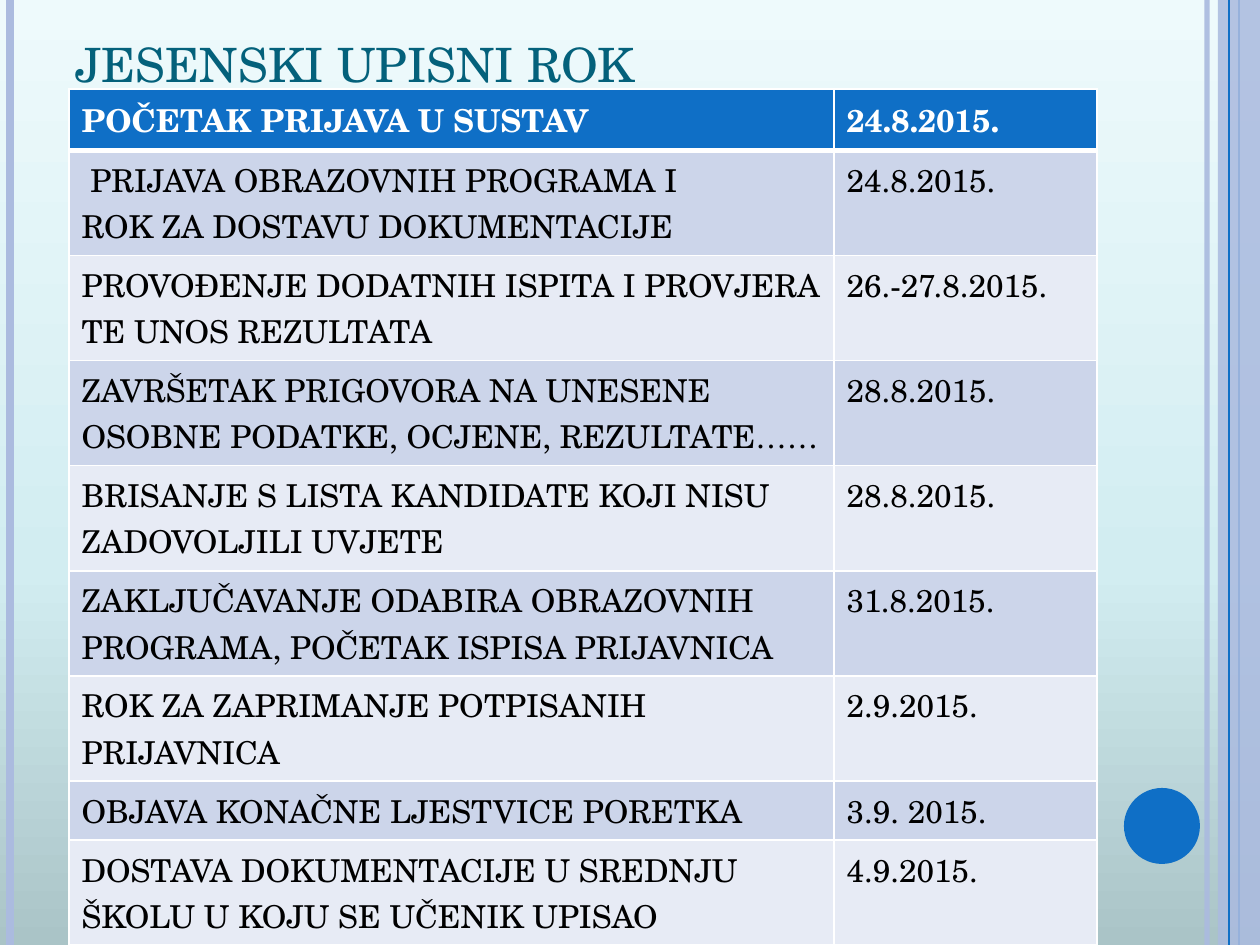
from copy import deepcopy
from typing import NamedTuple

from lxml.etree import SubElement as Sub
from pptx import Presentation
from pptx.dml.color import RGBColor as Rgb
from pptx.enum.shapes import MSO_CONNECTOR as Link, MSO_SHAPE as Kind
from pptx.enum.text import MSO_ANCHOR as Anchor, MSO_AUTO_SIZE as Fit, PP_ALIGN as Align
from pptx.oxml.ns import qn
from pptx.util import Emu, Pt

WIDE, HIGH = 1260, 945
FONT = "TeX Gyre Schola"
HUES = {
    "blue": "0F6FC6", "pale": "ABBBDF", "teal": "04617B",
    "odd": "CCD5EA", "even": "E7EBF5", "white": "FFFFFF", "black": "000000",
    "low": "AAC4C7", "mid": "D2EDF1", "top": "EEFAFC",
}


class Rule(NamedTuple):
    x: int
    hue: str
    width: float
    alpha: int = 100


class Block(NamedTuple):
    kind: Kind
    x: int
    y: int
    w: int
    h: int
    hue: str
    alpha: int = 100


class Row(NamedTuple):
    task: str
    date: str
    height: int = 105


DECOR = [
    Rule(1207, "pale", 3, 93),
    Rule(10, "pale", 4.5),
    Rule(1239, "blue", 1.5),
    Block(Kind.RECTANGLE, 1218, 0, 42, HIGH, "pale", 87),
    Rule(1229, "blue", 0.75),
    Block(Kind.OVAL, 1124, 788, 76, 76, "blue"),
]
ROWS = [
    Row("POČETAK PRIJAVA U SUSTAV", "24.8.2015.", 61),
    Row(" PRIJAVA OBRAZOVNIH PROGRAMA I\nROK ZA DOSTAVU DOKUMENTACIJE", "24.8.2015."),
    Row("PROVOĐENJE DODATNIH ISPITA I PROVJERA TE UNOS REZULTATA", "26.-27.8.2015."),
    Row("ZAVRŠETAK PRIGOVORA NA UNESENE OSOBNE PODATKE, OCJENE, REZULTATE……", "28.8.2015."),
    Row("BRISANJE S LISTA KANDIDATE KOJI NISU ZADOVOLJILI UVJETE", "28.8.2015."),
    Row("ZAKLJUČAVANJE ODABIRA OBRAZOVNIH PROGRAMA, POČETAK ISPISA PRIJAVNICA", "31.8.2015."),
    Row("ROK ZA ZAPRIMANJE POTPISANIH PRIJAVNICA", "2.9.2015."),
    Row("OBJAVA KONAČNE LJESTVICE PORETKA", "3.9. 2015.", 59),
    Row("DOSTAVA DOKUMENTACIJE U SREDNJU ŠKOLU U KOJU SE UČENIK UPISAO", "4.9.2015."),
]
COLS = [765, 263]


def px(size: int) -> Emu:
    return Emu(round(size * 914400 / 126))


def rgb(hue: str) -> Rgb:
    return Rgb.from_string(HUES[hue])


def fade(shape, alpha: int) -> None:
    if alpha < 100:
        tint = next(shape.element.spPr.iter(qn("a:srgbClr")))
        Sub(tint, qn("a:alpha"), val=str(alpha * 1000))


def style(frame, size: int, hue: str, bold: bool = False) -> None:
    for par in frame.paragraphs:
        par.alignment = Align.LEFT
        font = par.font
        font.name, font.size, font.bold = FONT, Pt(size), bold
        font.color.rgb = rgb(hue)


def draw_back(slide) -> None:
    fill = slide.background.fill
    fill.gradient()
    fill.gradient_angle = 90
    first = next(slide.element.iter(qn("a:gs")))
    first.addnext(deepcopy(first))
    for stop, hue, spot in zip(fill.gradient_stops, ("low", "mid", "top"), (0, 0.4, 1)):
        stop.color.rgb = rgb(hue)
        stop.position = spot


def draw_rule(slide, rule: Rule) -> None:
    line = slide.shapes.add_connector(Link.STRAIGHT, px(rule.x), 0, px(rule.x), px(HIGH))
    line.line.color.rgb = rgb(rule.hue)
    line.line.width = Pt(rule.width)
    fade(line, rule.alpha)
    Sub(line.element.spPr, qn("a:effectLst"))


def draw_block(slide, block: Block) -> None:
    box = map(px, (block.x, block.y, block.w, block.h))
    shape = slide.shapes.add_shape(block.kind, *box)
    shape.shadow.inherit = False
    shape.fill.solid()
    shape.fill.fore_color.rgb = rgb(block.hue)
    shape.line.fill.background()
    fade(shape, block.alpha)


def draw_title(slide, text: str) -> None:
    title = slide.shapes.title
    title.left, title.top, title.width, title.height = map(px, (63, 38, 1029, 60))
    frame = title.text_frame
    frame.text = text
    frame.auto_size, frame.vertical_anchor = Fit.NONE, Anchor.BOTTOM
    style(frame, 27, "teal")


def edge(cell, head: bool, below: bool) -> None:
    props = cell._tc.get_or_add_tcPr()
    widths = {"L": 1, "R": 1, "T": 3 if below else 1, "B": 3 if head else 1}
    for spot, (side, width) in enumerate(widths.items()):
        line = props.makeelement(qn(f"a:ln{side}"), {"w": str(Pt(width))})
        Sub(Sub(line, qn("a:solidFill")), qn("a:srgbClr"), val=HUES["white"])
        props.insert(spot, line)


def draw_table(slide, rows: list[Row]) -> None:
    size = map(px, (69, 89, sum(COLS), sum(row.height for row in rows)))
    table = slide.shapes.add_table(len(rows), len(COLS), *size).table
    for col, width in zip(table.columns, COLS):
        col.width = px(width)
    for i, row in enumerate(rows):
        table.rows[i].height = px(row.height)
        head = i == 0
        fill = "blue" if head else "odd" if i % 2 else "even"
        for j, text in enumerate((row.task, row.date)):
            cell = table.cell(i, j)
            cell.text = text
            cell.fill.solid()
            cell.fill.fore_color.rgb = rgb(fill)
            style(cell.text_frame, 18, "white" if head else "black", head)
            edge(cell, head, i == 1)


def main() -> None:
    """Build the autumn enrolment schedule slide."""
    deck = Presentation()
    deck.slide_width, deck.slide_height = px(WIDE), px(HIGH)
    slide = deck.slides.add_slide(deck.slide_layouts[5])
    draw_back(slide)
    for item in DECOR:
        if isinstance(item, Rule):
            draw_rule(slide, item)
        else:
            draw_block(slide, item)
    draw_title(slide, "JESENSKI UPISNI ROK")
    draw_table(slide, ROWS)
    deck.save("out.pptx")


if __name__ == "__main__":
    main()
